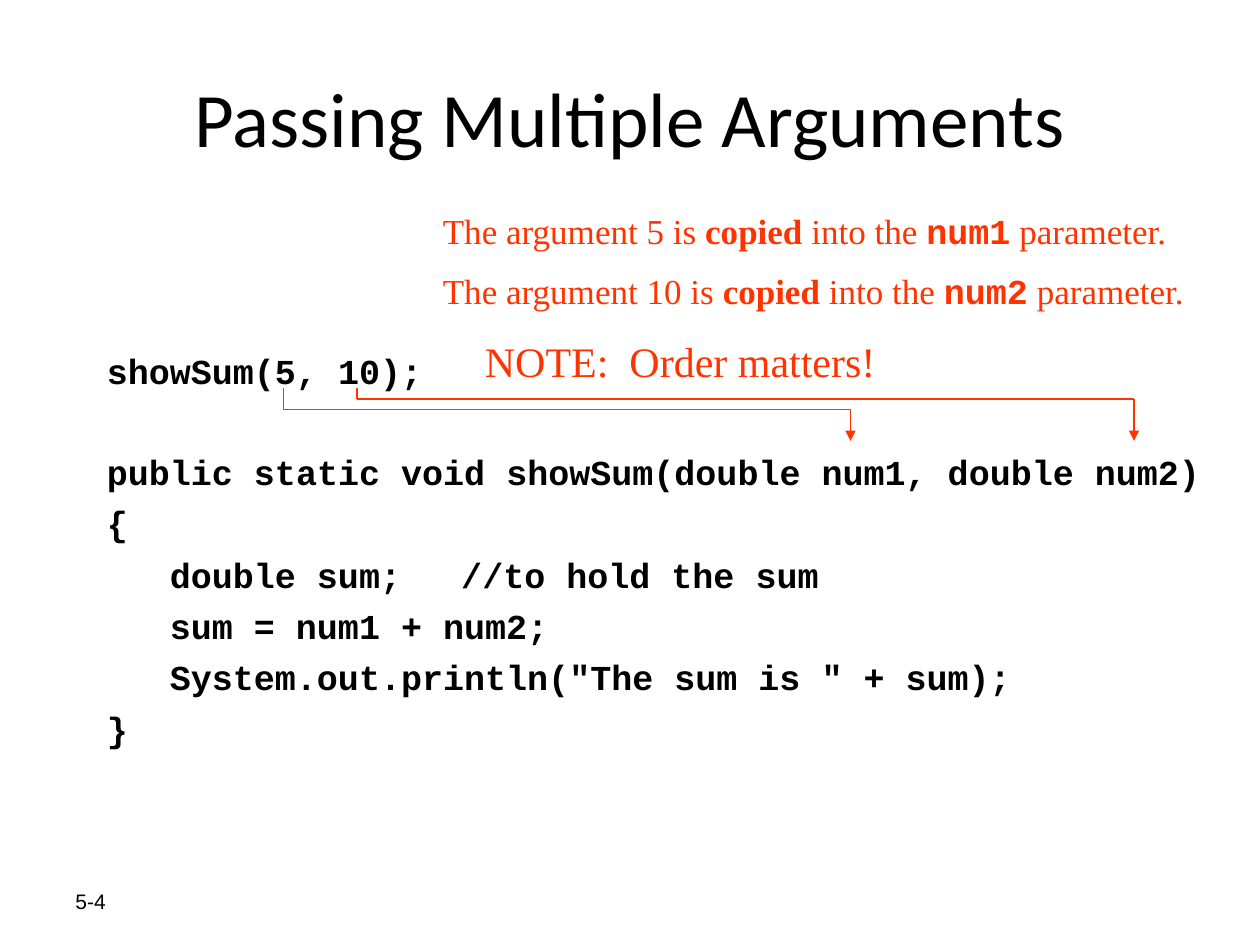
from itertools import pairwise

from lxml import etree
from pptx import Presentation
from pptx.dml.color import RGBColor
from pptx.enum.shapes import MSO_CONNECTOR
from pptx.enum.text import MSO_ANCHOR, PP_ALIGN
from pptx.oxml.ns import qn
from pptx.util import Pt

COLORS = {"text": "000000", "note": "FF3300"}
SERIF, MONO = "Times New Roman", "Courier New"

prs = Presentation()
prs.slide_width, prs.slide_height = Pt(720), Pt(540)
s = prs.slides.add_slide(prs.slide_layouts[6])


def add_text(box, paragraphs, size, color, gap=0, anchor=MSO_ANCHOR.TOP, align=PP_ALIGN.LEFT):
    """Add a text box; each paragraph is a list of (text, font name, bold) runs."""
    tf = s.shapes.add_textbox(*map(Pt, box)).text_frame
    tf.word_wrap = True
    tf.vertical_anchor = anchor
    for i, runs in enumerate(paragraphs):
        p = tf.paragraphs[0] if i == 0 else tf.add_paragraph()
        p.alignment = align
        p.space_before = Pt(gap if i else 0)
        for text, name, bold in runs:
            r = p.add_run()
            r.text = text
            r.font.color.rgb = RGBColor.from_string(COLORS[color])
            for key, value in {"name": name, "size": Pt(size), "bold": bold}.items():
                setattr(r.font, key, value)
    return tf


add_text((36, 500.4, 168, 28.8), [[("5-4", "Arial", False)]], 12, "text",
         anchor=MSO_ANCHOR.MIDDLE)
add_text((36, 21.6, 648, 90), [[("Passing Multiple Arguments", "Calibri", False)]], 44, "text",
         anchor=MSO_ANCHOR.MIDDLE, align=PP_ALIGN.CENTER)

# Code: the call, then the method with its indented body
code = [
    "showSum(5, 10);",
    "public static void showSum(double num1, double num2)",
    "{",
    "double sum;\t//to hold the sum",
    "sum = num1 + num2;",
    'System.out.println("The sum is " + sum);',
    "}",
]
line_gap, line_pitch = 5.35, 28
tf = add_text((54, 196.4, 648, 300), [[(line, MONO, True)] for line in code], 20, "text", line_gap)
tf.paragraphs[1].space_before = Pt(line_gap + line_pitch)
for p in tf.paragraphs[3:6]:
    pPr = p._p.get_or_add_pPr()
    pPr.set("marL", str(Pt(58.5)))
    pPr.set("indent", str(Pt(-22.5)))

# Remarks on how the arguments are passed
remarks = [
    [(f"The argument {value} is ", SERIF, False), ("copied", SERIF, True),
     (" into the ", SERIF, False), (name, MONO, True), (" parameter.", SERIF, False)]
    for value, name in ((5, "num1"), (10, "num2"))
]
add_text((246, 116, 444, 67), remarks, 20, "note", 10.5)
add_text((270, 188, 312, 36), [[("NOTE:  Order matters!", SERIF, False)]], 24, "note")

# Each argument is led down, across and down to its parameter
for arg_x, param_x, turn_y in ((162, 486, 234), (204, 648, 228)):
    route = [(arg_x, 222), (arg_x, turn_y), (param_x, turn_y), (param_x, 252)]
    for start, end in pairwise(route):
        c = s.shapes.add_connector(MSO_CONNECTOR.STRAIGHT, *map(Pt, start + end))
        c.line.color.rgb = RGBColor.from_string(COLORS["note"])
        c.line.width = Pt(0.75)
        etree.SubElement(c._element.spPr, qn("a:effectLst"))
    etree.SubElement(c.line._get_or_add_ln(), qn("a:tailEnd"), type="triangle")

prs.save("out.pptx")
